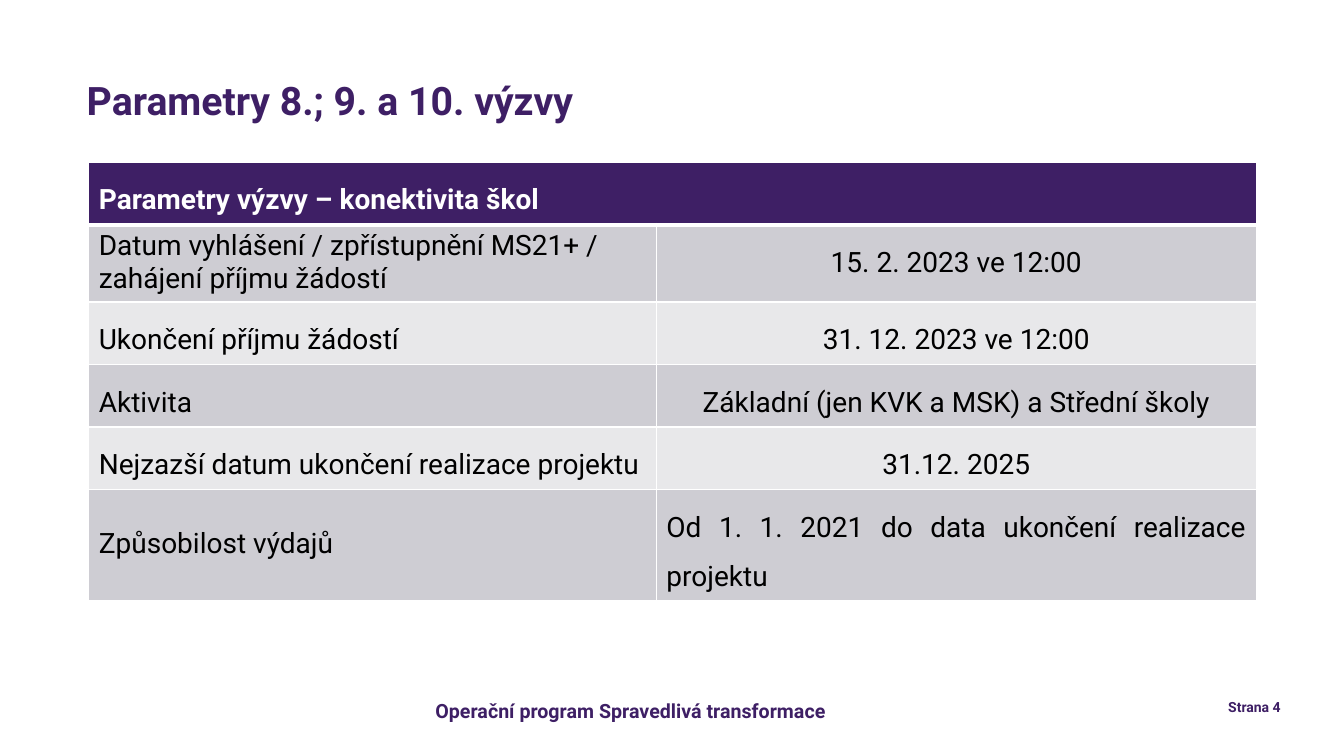
from dataclasses import dataclass

from pptx import Presentation
from pptx.dml.color import RGBColor as RGB
from pptx.enum.text import MSO_ANCHOR as Anchor, PP_ALIGN as Align
from pptx.oxml import parse_xml
from pptx.oxml.ns import nsdecls
from pptx.util import Inches, Pt


@dataclass(frozen=True)
class Theme:
    """Fonts, colours and type sizes of the slide."""
    font: str = "Roboto"
    purple: str = "3E1F65"
    white: str = "FFFFFF"
    black: str = "000000"
    bands: tuple = ("CECDD3", "E8E8EA")
    title: int = 28
    table: int = 20
    footer: int = 14
    page: int = 10


class SlideBuilder:
    """Draws styled elements on one slide."""

    def __init__(self, prs, theme):
        self.theme = theme
        self.slide = prs.slides.add_slide(prs.slide_layouts[5])

    def add_text(self, frame, text, size, color, bold=True, align=Align.LEFT, spacing=1.0):
        """Add one formatted run to the first paragraph."""
        paragraph = frame.paragraphs[0]
        paragraph.alignment = align
        paragraph.line_spacing = spacing
        run = paragraph.add_run()
        run.text = text
        run.font.name = self.theme.font
        run.font.size = Pt(size)
        run.font.bold = bold
        run.font.color.rgb = RGB.from_string(color)

    def title(self, text, left, top, width, height):
        """Place and fill the title placeholder."""
        heading = self.slide.shapes.title
        heading.left, heading.top = Inches(left), Inches(top)
        heading.width, heading.height = Inches(width), Inches(height)
        heading.text_frame.vertical_anchor = Anchor.TOP
        self.add_text(heading.text_frame, text, self.theme.title, self.theme.purple, spacing=0.9)

    def label(self, text, box, size, wrap=True, anchor=Anchor.TOP, align=Align.LEFT):
        """Add a text box in the main colour."""
        frame = self.slide.shapes.add_textbox(*map(Inches, box)).text_frame
        frame.word_wrap = wrap
        frame.vertical_anchor = anchor
        self.add_text(frame, text, size, self.theme.purple, align=align)

    def cell(self, cell, fill, bottom=1):
        """Set the borders and fill of a table cell."""
        for side, width in (("L", 1), ("R", 1), ("T", 1), ("B", bottom)):
            cell._tc.get_or_add_tcPr().append(parse_xml(
                f'<a:ln{side} {nsdecls("a")} w="{Pt(width)}"><a:solidFill>'
                f'<a:srgbClr val="{self.theme.white}"/></a:solidFill></a:ln{side}>'))
        cell.fill.solid()
        cell.fill.fore_color.rgb = RGB.from_string(fill)

    def table(self, header, rows, left, top, widths, heights):
        """Add a two-column table under a merged header."""
        theme = self.theme
        table = self.slide.shapes.add_table(
            len(heights), len(widths), Inches(left), Inches(top),
            Inches(sum(widths)), Inches(sum(heights))).table
        for column, width in zip(table.columns, widths):
            column.width = Inches(width)
        for row, height in zip(table.rows, heights):
            row.height = Inches(height)
        table.cell(0, 0).merge(table.cell(0, 1))
        for column in range(len(widths)):
            self.cell(table.cell(0, column), theme.purple, bottom=3)
        self.add_text(table.cell(0, 0).text_frame, header, theme.table, theme.white, spacing=1.5)
        for index, (name, name_spacing, value, value_align) in enumerate(rows):
            texts = ((name, Align.LEFT, name_spacing), (value, value_align, 1.5))
            for column, (text, align, spacing) in enumerate(texts):
                cell = table.cell(index + 1, column)
                self.cell(cell, theme.bands[index % 2])
                self.add_text(cell.text_frame, text, theme.table, theme.black, False, align, spacing)


PARAMETERS = (
    ("Datum vyhlášení / zpřístupnění MS21+ / zahájení příjmu žádostí", 1.0,
     "15. 2. 2023 ve 12:00", Align.CENTER),
    ("Ukončení příjmu žádostí", 1.5, "31. 12. 2023 ve 12:00", Align.CENTER),
    ("Aktivita", 1.5, "Základní (jen KVK a MSK) a Střední školy", Align.CENTER),
    ("Nejzazší datum ukončení realizace projektu", 1.5, "31.12. 2025", Align.CENTER),
    ("Způsobilost výdajů", 2.0,
     "Od 1. 1. 2021 do data ukončení realizace projektu", Align.JUSTIFY),
)


def main():
    """Build and save the slide."""
    prs = Presentation()
    prs.slide_width, prs.slide_height = Inches(13.33), Inches(7.5)
    theme = Theme()
    builder = SlideBuilder(prs, theme)
    builder.label("Operační program Spravedlivá transformace", (4.22, 6.88, 4.3, 0.34),
                  theme.footer, wrap=False)
    builder.label("Strana 4", (9.42, 6.81, 3.38, 0.4), theme.page,
                  anchor=Anchor.MIDDLE, align=Align.RIGHT)
    builder.title("Parametry 8.; 9. a 10. výzvy", 0.76, 0.76, 12.34, 0.75)
    builder.table("Parametry výzvy – konektivita škol", PARAMETERS, 0.88, 1.61,
                  (5.63, 5.95), (0.62, 0.76, 0.62, 0.62, 0.62, 1.08))
    prs.save("out.pptx")


if __name__ == "__main__":
    main()
